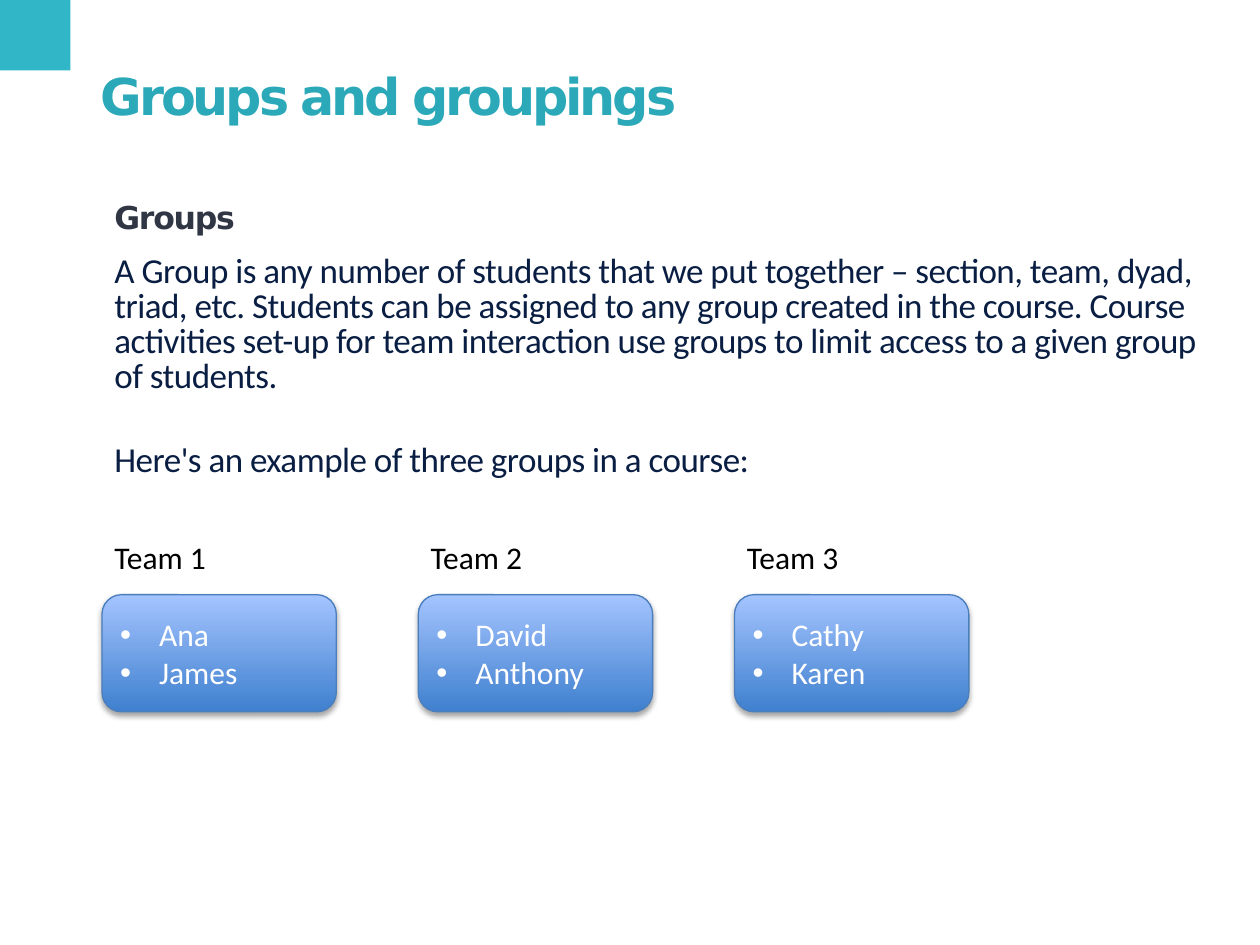
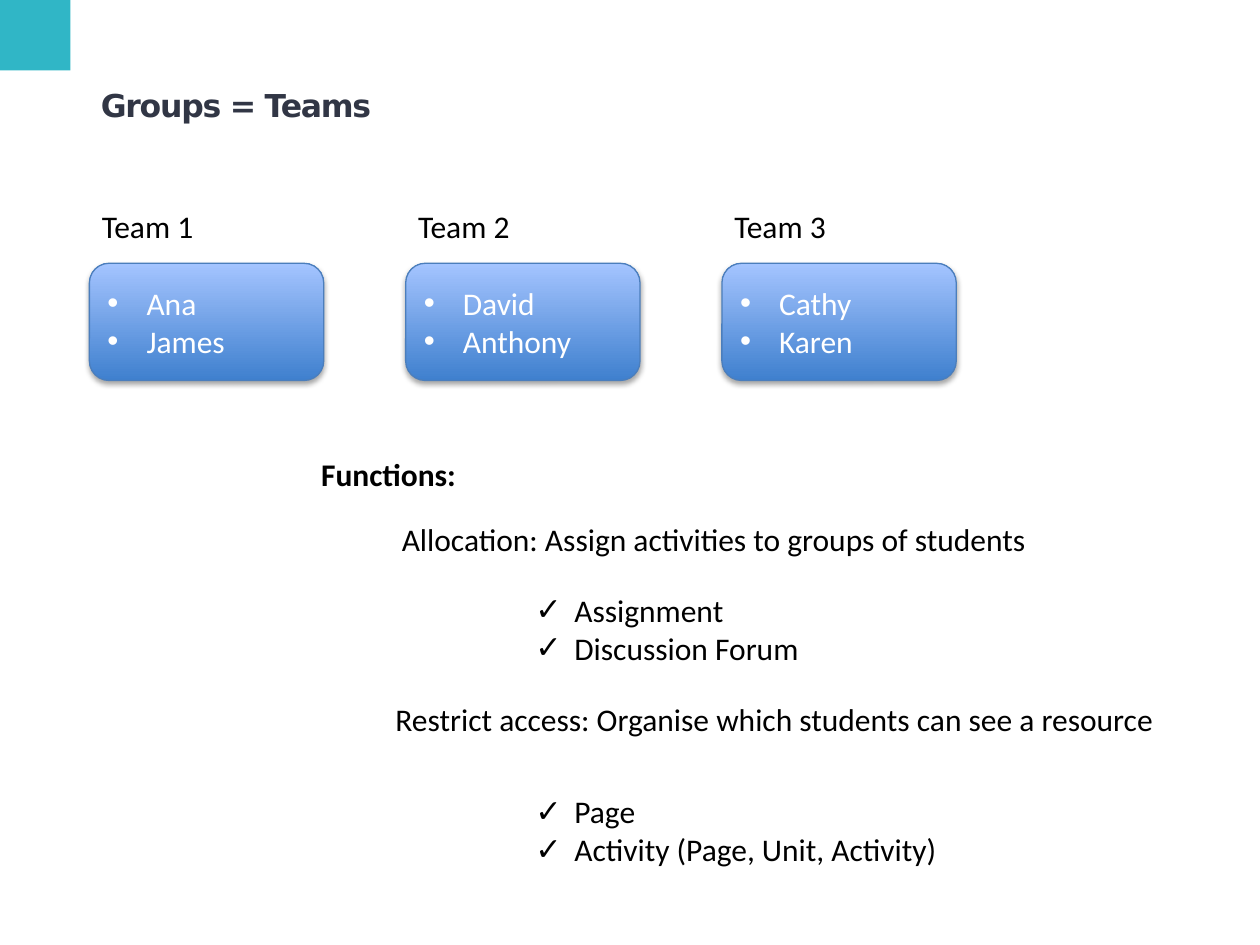
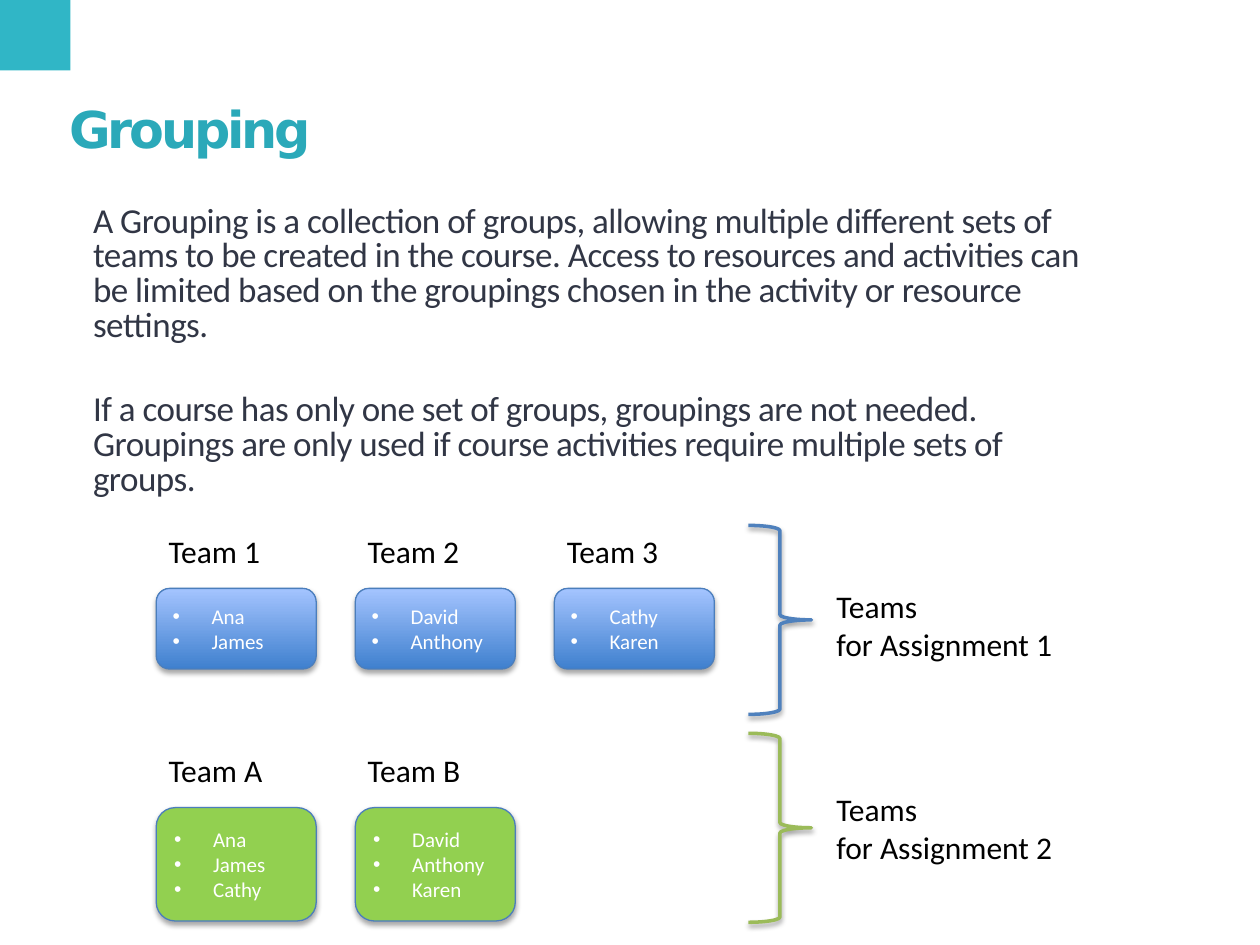
import dataclasses
import typing

import lxml.etree
import pptx
import pptx.dml.color
import pptx.enum.shapes
import pptx.enum.text
import pptx.oxml.ns
import pptx.util

Inches = pptx.util.Inches
Pt = pptx.util.Pt
qn = pptx.oxml.ns.qn
SHAPE = pptx.enum.shapes.MSO_SHAPE
ANCHOR = pptx.enum.text.MSO_ANCHOR
FIT = pptx.enum.text.MSO_AUTO_SIZE
ALIGN = pptx.enum.text.PP_ALIGN

# Shared look
HUES = {
    "band": "30B6C6", "title": "2BA9B9", "slate": "313645", "navy": "091E42",
    "black": "000000", "white": "FFFFFF", "edge": "4B7EBC", "deep": "3F80CE",
    "pale": "A4C4FF", "green": "92D050", "blue": "4F81BD", "olive": "9BBB59",
}
SANS, HEAD = "Calibri", "DejaVu Sans"
INDENT = 0.31
LABEL_RISE, LABEL_WIDTH = 0.5, 0.97


@dataclasses.dataclass(frozen=True)
class Style:
    size: float
    hue: str
    font: str = SANS
    bold: bool = False
    track: float = 0
    lead: typing.Optional[float] = None
    gap: float = 0
    bullet: str = ""


TITLE = Style(29, "title", HEAD, True, -1.8, 0.8)
SUBHEAD = Style(18, "slate", HEAD, True, -0.7, 0.83)
BODY = Style(20, "navy", track=-0.3, lead=0.83, gap=28)
SLATE_BODY = dataclasses.replace(BODY, hue="slate")
PLAIN = Style(18, "black")
STRONG = Style(18, "black", bold=True)
CHECK = Style(18, "black", bullet="✓")
NAMES = Style(18, "white", bullet="•")
SMALL_NAMES = dataclasses.replace(NAMES, size=12)


@dataclasses.dataclass(frozen=True)
class Box:
    left: float
    top: float
    width: float
    height: float

    def lengths(self) -> list:
        return [Inches(n) for n in dataclasses.astuple(self)]


@dataclasses.dataclass(frozen=True)
class Team:
    name: str
    people: tuple


@dataclasses.dataclass(frozen=True)
class Row:
    first: Box
    step: float
    teams: tuple
    style: Style = NAMES
    fill: str = ""


@dataclasses.dataclass(frozen=True)
class Note:
    box: Box
    lines: tuple
    style: Style = PLAIN
    wrap: bool = False


@dataclasses.dataclass(frozen=True)
class Brace:
    top: float
    hue: str


TEAMS = (
    Team("Team 1", ("Ana", "James")),
    Team("Team 2", ("David", "Anthony")),
    Team("Team 3", ("Cathy", "Karen")),
)
MIXED = (
    Team("Team A", ("Ana", "James", "Cathy")),
    Team("Team B", ("David", "Anthony", "Karen")),
)


# Helpers
def put(thing: typing.Any, values: dict) -> None:
    for key, value in values.items():
        setattr(thing, key, value)


def tint(name: str) -> pptx.dml.color.RGBColor:
    return pptx.dml.color.RGBColor.from_string(HUES[name])


def mark(para: typing.Any, sign: str) -> None:
    props = para._p.get_or_add_pPr()
    props.set("marL", str(Inches(INDENT)))
    props.set("indent", str(-Inches(INDENT)))
    lxml.etree.SubElement(props, qn("a:buFont")).set("typeface", "Arial")
    lxml.etree.SubElement(props, qn("a:buChar")).set("char", sign)


def write(frame: typing.Any, lines: tuple, style: Style) -> None:
    for spot, line in enumerate(lines):
        para = frame.paragraphs[0] if spot == 0 else frame.add_paragraph()
        if style.bullet:
            mark(para, style.bullet)
        put(para, {"alignment": ALIGN.LEFT, "line_spacing": style.lead})
        if spot and style.gap:
            para.space_before = Pt(style.gap)
        run = para.add_run()
        run.text = line
        put(run.font, {"name": style.font, "size": Pt(style.size), "bold": style.bold})
        run.font.color.rgb = tint(style.hue)
        if style.track:
            run._r.get_or_add_rPr().set("spc", str(round(style.track * 100)))


def shade(shape: typing.Any, alpha: int) -> None:
    shape.shadow.inherit = False
    effects = shape._element.spPr.find(qn("a:effectLst"))
    outer = lxml.etree.SubElement(effects, qn("a:outerShdw"))
    values = {"blurRad": Pt(3.1), "dist": Pt(1.8), "dir": 90 * 60000, "rotWithShape": 0}
    for key, value in values.items():
        outer.set(key, str(value))
    color = lxml.etree.SubElement(outer, qn("a:srgbClr"))
    color.set("val", HUES["black"])
    lxml.etree.SubElement(color, qn("a:alpha")).set("val", str(alpha * 1000))


def outline(shape: typing.Any, hue: str, width: float) -> None:
    shape.line.color.rgb = tint(hue)
    shape.line.width = Pt(width)


# Drawing
def add_band(slide: typing.Any) -> None:
    """Draw the corner square and hand it to the shared layout."""
    band = slide.shapes.add_shape(SHAPE.RECTANGLE, *Box(0, 0, 0.56, 0.56).lengths())
    band.shadow.inherit = False
    band.fill.solid()
    band.fill.fore_color.rgb = tint("band")
    band.line.fill.background()
    slide.slide_layout.shapes._spTree.insert(2, band._element)


def add_title(slide: typing.Any, text: str, box: Box, style: Style) -> None:
    title = slide.shapes.title
    put(title, dict(zip(("left", "top", "width", "height"), box.lengths())))
    put(title.text_frame, {"word_wrap": True, "auto_size": FIT.NONE,
                           "vertical_anchor": ANCHOR.TOP})
    write(title.text_frame, (text,), style)


def add_note(slide: typing.Any, note: Note) -> None:
    frame = slide.shapes.add_textbox(*note.box.lengths()).text_frame
    fit = FIT.NONE if note.wrap else FIT.SHAPE_TO_FIT_TEXT
    put(frame, {"word_wrap": note.wrap, "auto_size": fit})
    write(frame, note.lines, note.style)


def add_card(slide: typing.Any, box: Box, team: Team, row: Row) -> None:
    card = slide.shapes.add_shape(SHAPE.ROUNDED_RECTANGLE, *box.lengths())
    if row.fill:
        card.fill.solid()
        card.fill.fore_color.rgb = tint(row.fill)
    else:
        card.fill.gradient()
        card.fill.gradient_angle = 90
        for stop, hue, place in zip(card.fill.gradient_stops, ("deep", "pale"), (0, 1)):
            stop.color.rgb = tint(hue)
            stop.position = place
    outline(card, "edge", 0.75)
    shade(card, 35)
    card.text_frame.vertical_anchor = ANCHOR.MIDDLE
    write(card.text_frame, team.people, row.style)


def add_row(slide: typing.Any, row: Row) -> None:
    for spot, team in enumerate(row.teams):
        box = dataclasses.replace(row.first, left=row.first.left + spot * row.step)
        add_card(slide, box, team, row)
        label = Box(box.left, box.top - LABEL_RISE, LABEL_WIDTH, 0.4)
        add_note(slide, Note(label, (team.name,)))


def add_brace(slide: typing.Any, brace: Brace) -> None:
    box = Box(5.94, brace.top, 0.5, 1.5)
    shape = slide.shapes.add_shape(SHAPE.RIGHT_BRACE, *box.lengths())
    shape.fill.background()
    outline(shape, brace.hue, 2)
    shade(shape, 38)


# Slides
def groups(slide: typing.Any) -> None:
    add_title(slide, "Groups and groupings", Box(0.7, 0.56, 5.62, 0.45), TITLE)
    add_note(slide, Note(Box(0.81, 1.57, 2.7, 0.36), ("Groups",), SUBHEAD, True))
    add_note(slide, Note(Box(0.81, 1.98, 8.79, 1.86), (
        "A Group is any number of students that we put together – section, team, "
        "dyad, triad, etc. Students can be assigned to any group created in the "
        "course. Course activities set-up for team interaction use groups to limit "
        "access to a given group of students.",
        "Here's an example of three groups in a course:",
    ), BODY, True))
    add_row(slide, Row(Box(0.81, 4.72, 1.86, 0.93), 2.51, TEAMS))


def uses(slide: typing.Any) -> None:
    add_title(slide, "Groups = Teams", Box(0.7, 0.68, 2.7, 0.36), SUBHEAD)
    add_row(slide, Row(Box(0.71, 2.09, 1.86, 0.93), 2.51, TEAMS))
    for note in (
        Note(Box(2.45, 3.56, 1.28, 0.4), ("Functions:",), STRONG),
        Note(Box(3.09, 4.08, 5.21, 0.4),
             ("Allocation: Assign activities to groups of students",)),
        Note(Box(4.15, 4.64, 2.32, 0.71), ("Assignment", "Discussion Forum"), CHECK),
        Note(Box(3.04, 5.51, 6.29, 0.4),
             ("Restrict access: Organise which students can see a resource",)),
        Note(Box(4.15, 6.24, 3.39, 0.71),
             ("Page", "Activity (Page, Unit, Activity)"), CHECK),
    ):
        add_note(slide, note)


def grouping(slide: typing.Any) -> None:
    add_title(slide, "Grouping", Box(0.45, 0.82, 4.23, 0.45), TITLE)
    add_note(slide, Note(Box(0.64, 1.58, 8.08, 1.86), (
        "A Grouping is a collection of groups, allowing multiple different sets of "
        "teams to be created in the course. Access to resources and activities can "
        "be limited based on the groupings chosen in the activity or resource "
        "settings.",
        "If a course has only one set of groups, groupings are not needed. Groupings "
        "are only used if course activities require multiple sets of groups.",
    ), SLATE_BODY, True))
    add_row(slide, Row(Box(1.24, 4.67, 1.27, 0.64), 1.58, TEAMS, SMALL_NAMES))
    add_row(slide, Row(Box(1.24, 6.41, 1.27, 0.9), 1.58, MIXED, SMALL_NAMES, "green"))
    braces = (Brace(4.17, "blue"), Brace(5.82, "olive"))
    for count, (brace, top) in enumerate(zip(braces, (4.61, 6.22)), 1):
        add_brace(slide, brace)
        lines = ("Teams", f"for Assignment {count}")
        add_note(slide, Note(Box(6.54, top, 1.93, 0.71), lines))


def main() -> None:
    deck = pptx.Presentation()
    put(deck, {"slide_width": Inches(10), "slide_height": Inches(7.5)})
    layout = deck.slide_layouts.get_by_name("Title Only")
    for spot, build in enumerate((groups, uses, grouping)):
        slide = deck.slides.add_slide(layout)
        if spot == 0:
            add_band(slide)
        build(slide)
    deck.save("out.pptx")


if __name__ == "__main__":
    main()
